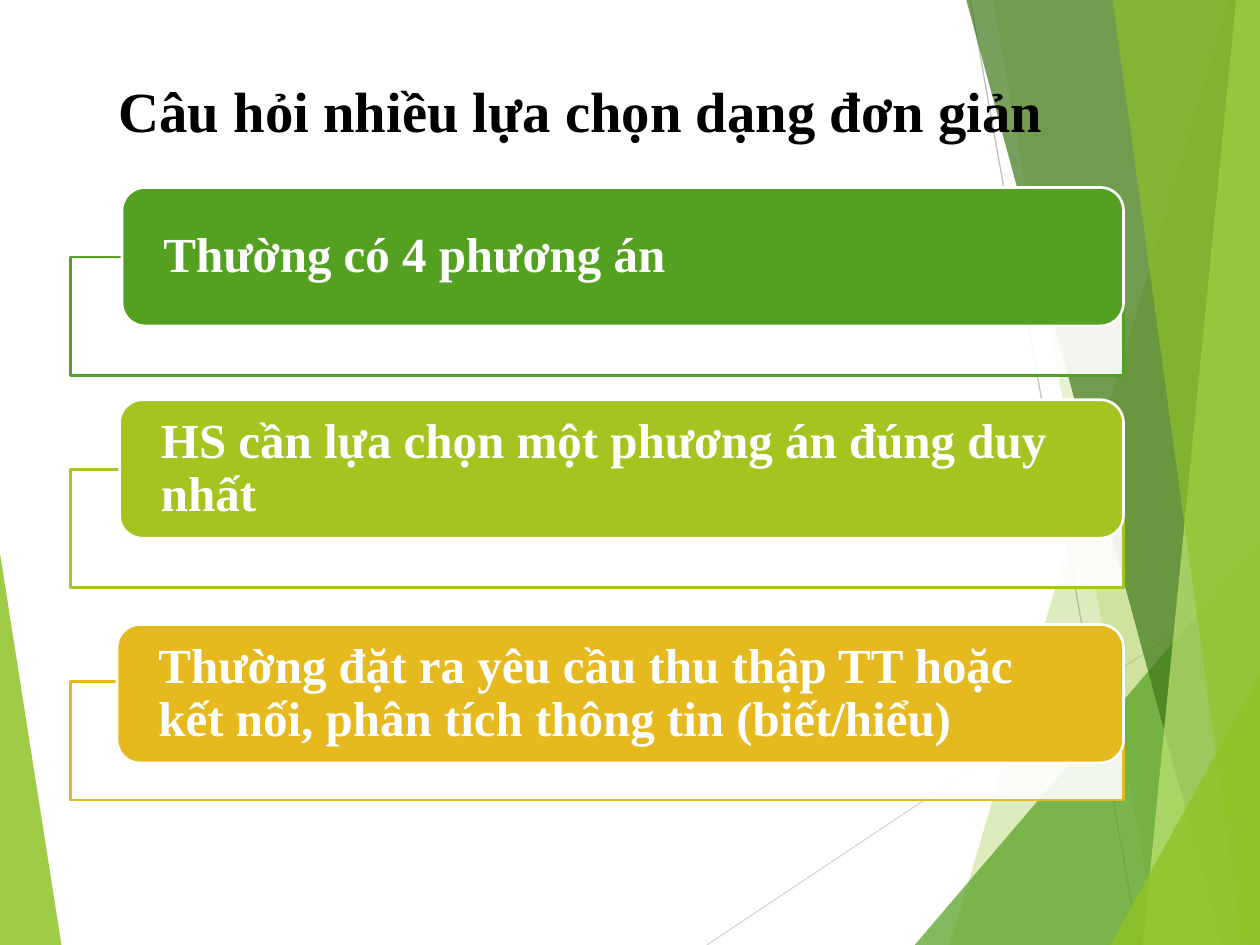
from lxml.etree import SubElement
from pptx import Presentation
from pptx.dml.color import RGBColor
from pptx.enum.shapes import MSO_CONNECTOR as Connector, MSO_SHAPE as Shape
from pptx.enum.text import MSO_ANCHOR as Anchor, MSO_AUTO_SIZE as AutoSize, PP_ALIGN as Align
from pptx.oxml.ns import qn
from pptx.util import Cm, Pt

WIDTH, HEIGHT = 25.4, 19.05
FONT = "Times New Roman"
BLACK = RGBColor(0x00, 0x00, 0x00)
WHITE = RGBColor(0xFF, 0xFF, 0xFF)
LIGHT_GRAY = RGBColor(0xD9, 0xD9, 0xD9)
GRAY = RGBColor(0xBF, 0xBF, 0xBF)
LEAF = RGBColor(0x90, 0xC2, 0x26)
GREEN = RGBColor(0x54, 0xA0, 0x21)
FOREST = RGBColor(0x3F, 0x78, 0x19)
PALE = RGBColor(0xC0, 0xE4, 0x74)
LIME = RGBColor(0xA5, 0xC4, 0x1F)
GOLD = RGBColor(0xE6, 0xB9, 0x1E)

FRAME_LEFT, FRAME_TOP, FRAME_HEIGHT = 1.42, 5.18, 2.39
CARD_RIGHT, CARD_HEIGHT, PITCH = 22.65, 2.79, 4.28
CARDS = [
    ("Thường có 4 phương án", GREEN, 2.46, 3.78),
    ("HS cần lựa chọn một phương án đúng duy nhất", LIME, 2.41, 8.06),
    ("Thường đặt ra yêu cầu thu thập TT hoặc kết nối, phân tích thông tin (biết/hiểu)",
     GOLD, 2.36, 12.59),
]


def band(top_x, bottom_x):
    return [(top_x, 0), (bottom_x, HEIGHT), (WIDTH, HEIGHT), (WIDTH, 0)]


def corner(edge_x, bottom_x, side_y):
    return [(bottom_x, HEIGHT), (edge_x, side_y), (edge_x, HEIGHT)]


def fill_shape(shape, color, opacity=100):
    shape.shadow.inherit = False
    shape.fill.solid()
    shape.fill.fore_color.rgb = color
    if opacity < 100:
        tint = shape.element.spPr.find(qn("a:solidFill"))[0]
        SubElement(tint, qn("a:alpha")).set("val", str(opacity * 1000))


def add_facet(page, points, color, opacity):
    corners = [(Cm(x), Cm(y)) for x, y in points]
    builder = page.shapes.build_freeform(*corners[0])
    builder.add_line_segments(corners[1:], close=True)
    facet = builder.convert_to_shape()
    fill_shape(facet, color, opacity)
    facet.line.fill.background()


def add_ray(page, start, end, color):
    ray = page.shapes.add_connector(Connector.STRAIGHT, *map(Cm, start + end))
    ray.line.color.rgb = color
    ray.line.width = Pt(0.75)
    SubElement(ray.element.spPr, qn("a:effectLst"))


def add_backdrop(page):
    add_facet(page, corner(0, 1.24, 11.15), LEAF, 85)
    add_ray(page, (14.25, HEIGHT), (WIDTH, 11.62), LIGHT_GRAY)
    add_ray(page, (19.56, 0), (22.96, HEIGHT), GRAY)
    for points, color, opacity in [
        (band(24.77, 19.15), LEAF, 30),
        (band(20.02, 23.34), LEAF, 20),
        (corner(WIDTH, 18.44, 10.9), GREEN, 72),
        (band(19.48, 24.64), FOREST, 70),
        (band(24.92, 23.04), PALE, 70),
        (band(22.43, 25.04), LEAF, 65),
        (corner(WIDTH, 22.38, 13.6), LEAF, 80),
    ]:
        add_facet(page, points, color, opacity)


def write(shape, text, size, color, align):
    frame = shape.text_frame
    frame.text = text
    frame.word_wrap = True
    frame.auto_size = AutoSize.NONE
    frame.vertical_anchor = Anchor.MIDDLE
    para = frame.paragraphs[0]
    para.alignment = align
    font = para.runs[0].font
    font.name, font.size, font.bold = FONT, Pt(size), True
    font.color.rgb = color


def place_title(page, text):
    title = page.shapes.title
    title.left, title.top, title.width, title.height = map(Cm, (1.42, 1.27, 20.57, 1.9))
    write(title, text, 32.4, BLACK, Align.CENTER)
    title.element.getparent().append(title.element)


def add_box(page, kind, left, top, height, fill, opacity, outline):
    box = page.shapes.add_shape(
        kind, Cm(left), Cm(top), Cm(CARD_RIGHT - left), Cm(height))
    fill_shape(box, fill, opacity)
    box.line.color.rgb = outline
    box.line.width = Pt(1.5)
    return box


def add_card(page, index, text, color, left, top):
    add_box(page, Shape.RECTANGLE, FRAME_LEFT, FRAME_TOP + index * PITCH,
            FRAME_HEIGHT, WHITE, 90, color)
    card = add_box(page, Shape.ROUNDED_RECTANGLE, left, top,
                   CARD_HEIGHT, color, 100, WHITE)
    write(card, text, 28, WHITE, Align.LEFT)
    frame = card.text_frame
    frame.margin_left = frame.margin_right = Cm(0.7)
    frame.margin_top = frame.margin_bottom = Cm(0.14)
    frame.paragraphs[0].line_spacing = 0.9


def main():
    deck = Presentation()
    deck.slide_width, deck.slide_height = Cm(WIDTH), Cm(HEIGHT)
    page = deck.slides.add_slide(deck.slide_layouts.get_by_name("Title Only"))
    add_backdrop(page)
    place_title(page, "Câu hỏi nhiều lựa chọn dạng đơn giản")
    for index, card in enumerate(CARDS):
        add_card(page, index, *card)
    deck.save("out.pptx")


if __name__ == "__main__":
    main()
